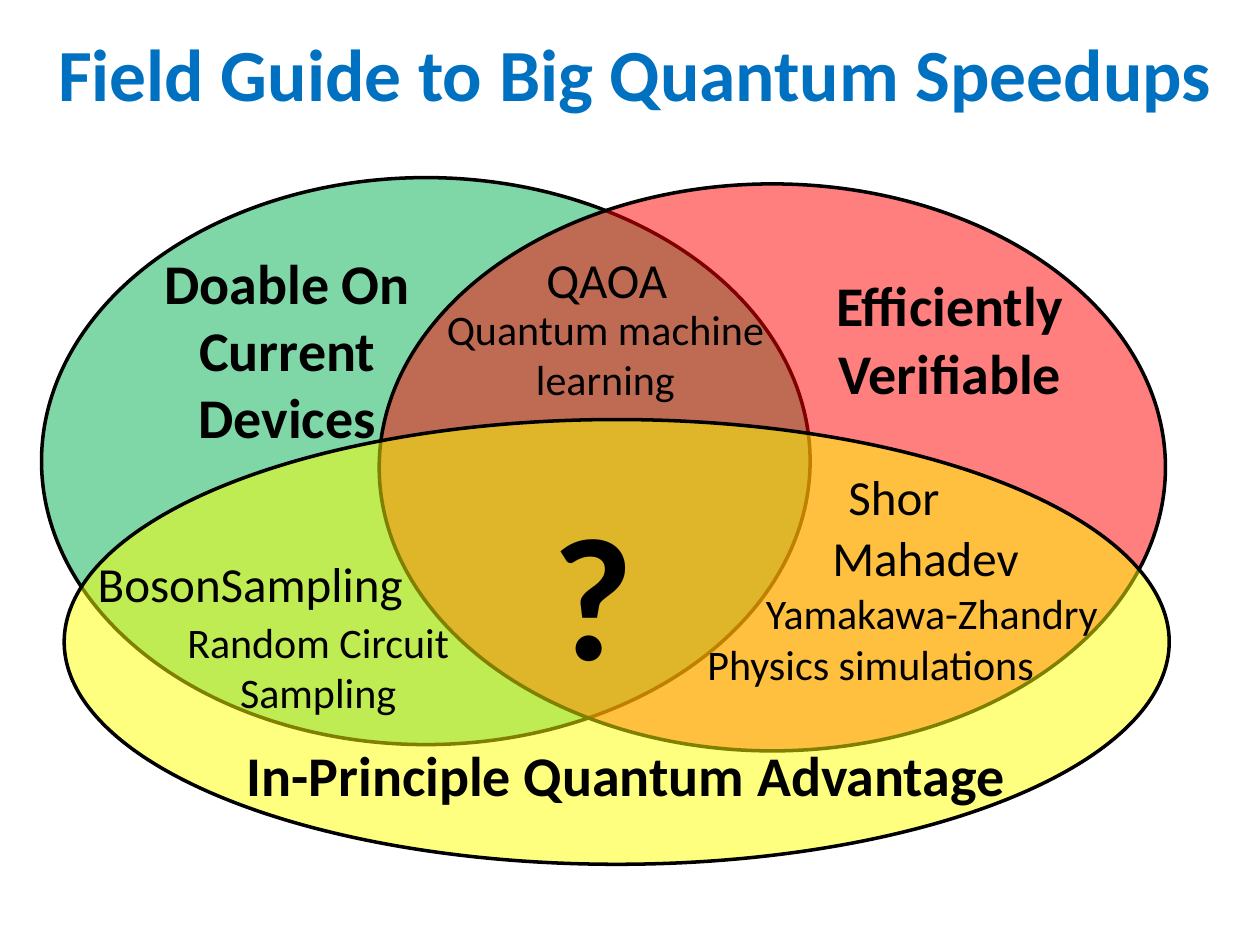
"""Build the Venn slide on big quantum speedups."""
from pptx import Presentation, util as u
from pptx.dml.color import RGBColor
from pptx.enum import shapes, text
from pptx.oxml.ns import qn
from lxml import etree

BLUE = RGBColor(0x00, 0x70, 0xC0)
BLACK = RGBColor(0x00, 0x00, 0x00)
GREEN = RGBColor(0x00, 0xB0, 0x50)
RED = RGBColor(0xFF, 0x00, 0x00)
YELLOW = RGBColor(0xFF, 0xFF, 0x00)

TITLE = ("Field Guide to Big Quantum Speedups", (0.25, 0.11, 9.58, 0.93))
SETS = [
    (GREEN, (0.33, 1.41, 6.1, 4.5)),
    (RED, (3.01, 1.46, 6.24, 4.5)),
    (YELLOW, (0.51, 3.33, 8.77, 3.53)),
]
HEADS = [
    ("Doable On Current Devices", (0.82, 1.92, 2.92, 1.72)),
    ("Efficiently\nVerifiable", (6.44, 2.1, 2.2, 1.18)),
    ("In-Principle Quantum Advantage", (1.85, 5.83, 6.24, 0.64)),
]
LARGE = [
    ("Mahadev", (6.34, 4.14, 2.01, 0.57)),
    ("Shor", (6.09, 3.65, 2.01, 0.57)),
    ("QAOA", (3.81, 1.93, 2.01, 0.57)),
    ("BosonSampling", (0.59, 4.34, 2.79, 0.57)),
]
SMALL = [
    ("Physics simulations", (5.38, 5.02, 3.06, 0.51)),
    ("Quantum machine learning", (3.11, 2.36, 3.39, 0.91)),
    ("Yamakawa-Zhandry", (5.7, 4.61, 3.39, 0.51)),
    ("Random Circuit Sampling", (1.13, 4.84, 2.79, 0.91)),
]
CORE = ("?", (2.92, 3.8, 3.58, 1.78))
GROUPS = [
    (HEADS, 32, True),
    (LARGE, 28, False),
    (SMALL, 24, False),
    ([CORE], 100, True),
]


def add_set(slide, tint, box):
    oval = slide.shapes.add_shape(
        shapes.MSO_SHAPE.OVAL, *map(u.Inches, box))
    oval.shadow.inherit = False
    oval.fill.solid()
    oval.fill.fore_color.rgb = tint
    color = oval.fill._xPr.find(".//" + qn("a:srgbClr"))
    etree.SubElement(color, qn("a:alpha"), val="50000")
    oval.line.color.rgb = BLACK
    oval.line.width = u.Pt(2)


def add_label(slide, words, box, size, bold, color=BLACK):
    frame = slide.shapes.add_textbox(*map(u.Inches, box)).text_frame
    frame.word_wrap = True
    frame.text = words
    style = {"name": "Calibri", "size": u.Pt(size), "bold": bold}
    for para in frame.paragraphs:
        para.alignment = text.PP_ALIGN.CENTER
        for key, value in style.items():
            setattr(para.font, key, value)
        para.font.color.rgb = color
    return frame


def main():
    deck = Presentation()
    deck.slide_width, deck.slide_height = u.Inches(10), u.Inches(7.5)
    slide = deck.slides.add_slide(deck.slide_layouts[6])
    title = add_label(slide, *TITLE, 42, True, BLUE)
    title.vertical_anchor = text.MSO_ANCHOR.MIDDLE
    for tint, box in SETS:
        add_set(slide, tint, box)
    for items, size, bold in GROUPS:
        for words, box in items:
            label = add_label(slide, words, box, size, bold)
            label.auto_size = text.MSO_AUTO_SIZE.SHAPE_TO_FIT_TEXT
    deck.save("out.pptx")


if __name__ == "__main__":
    main()
